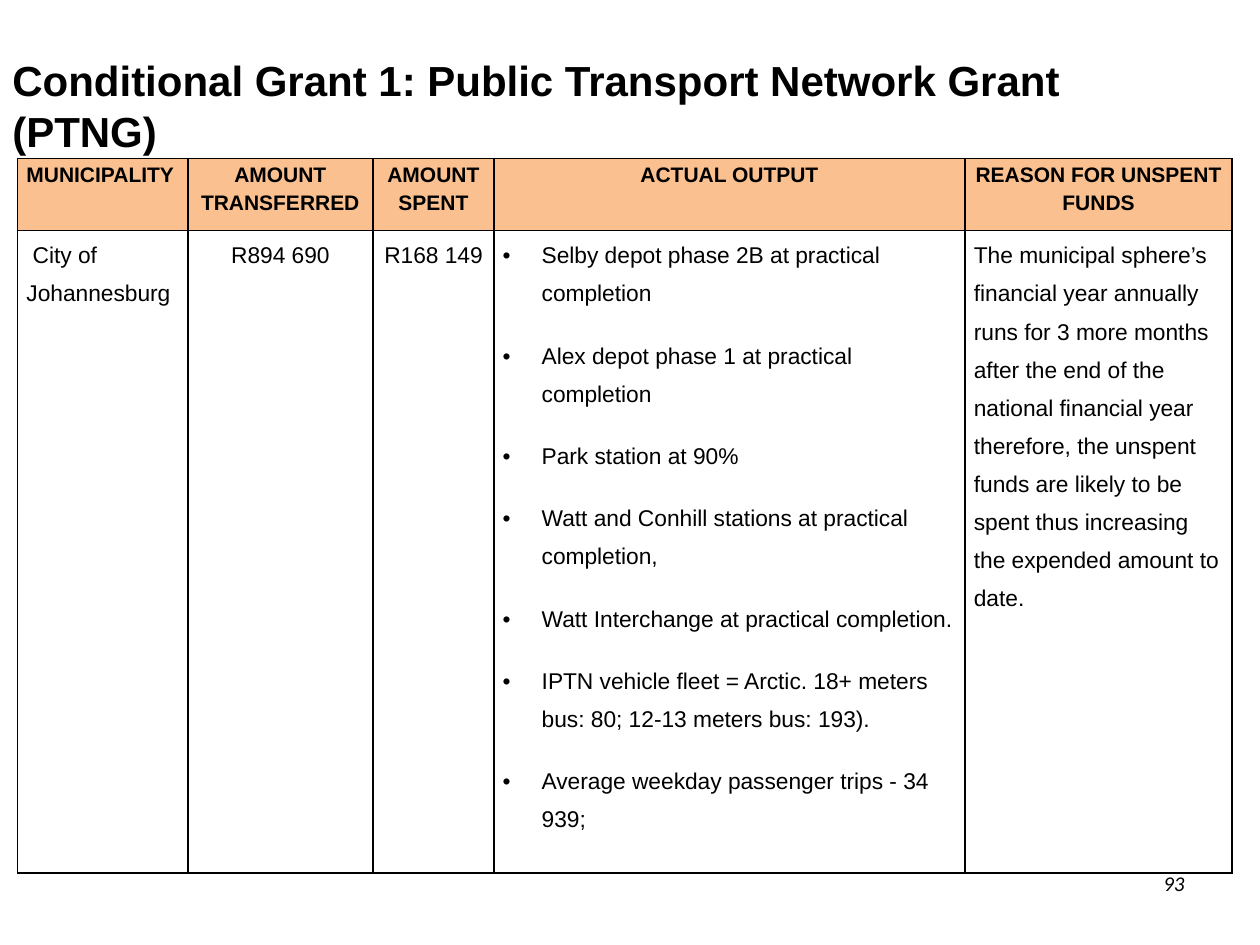
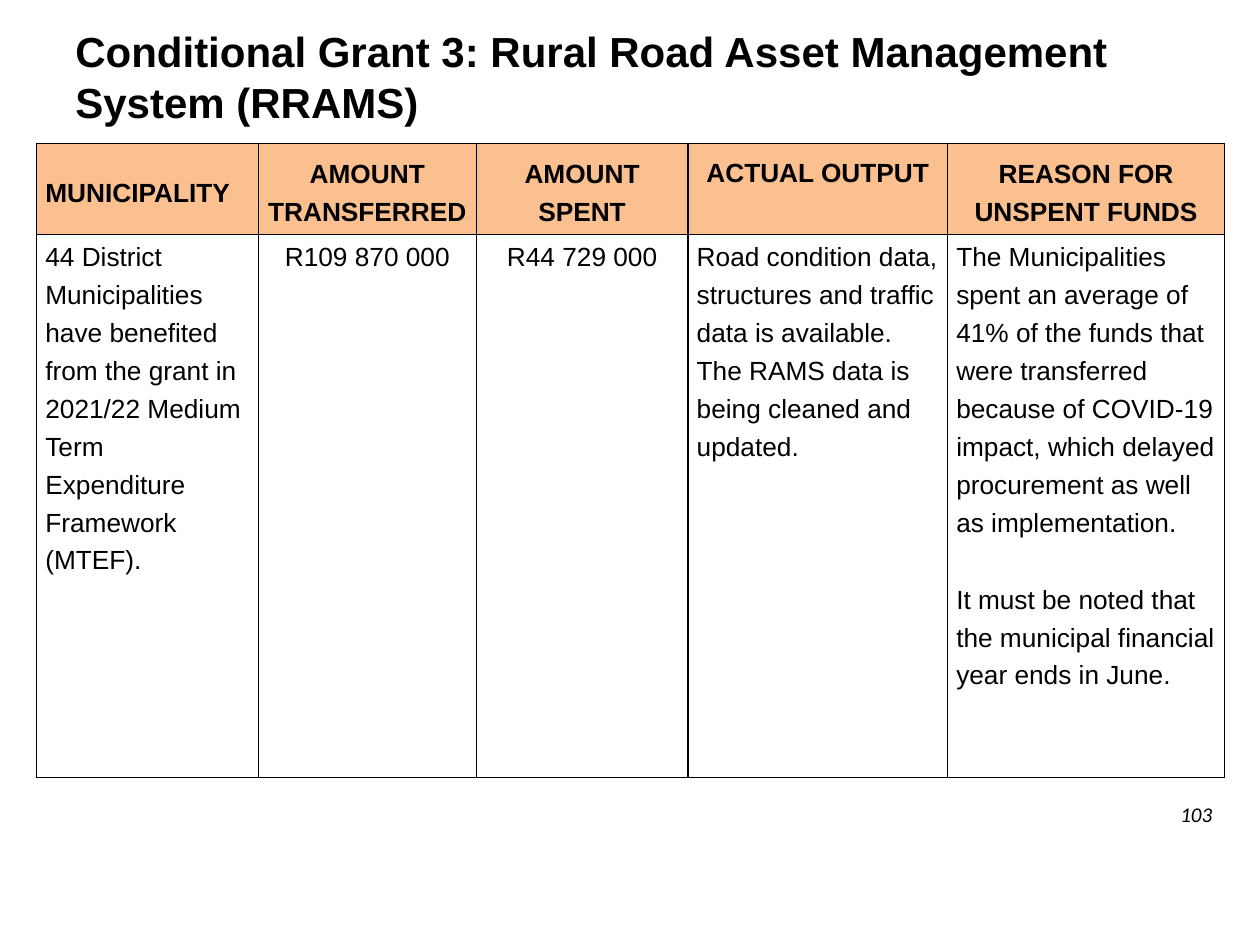
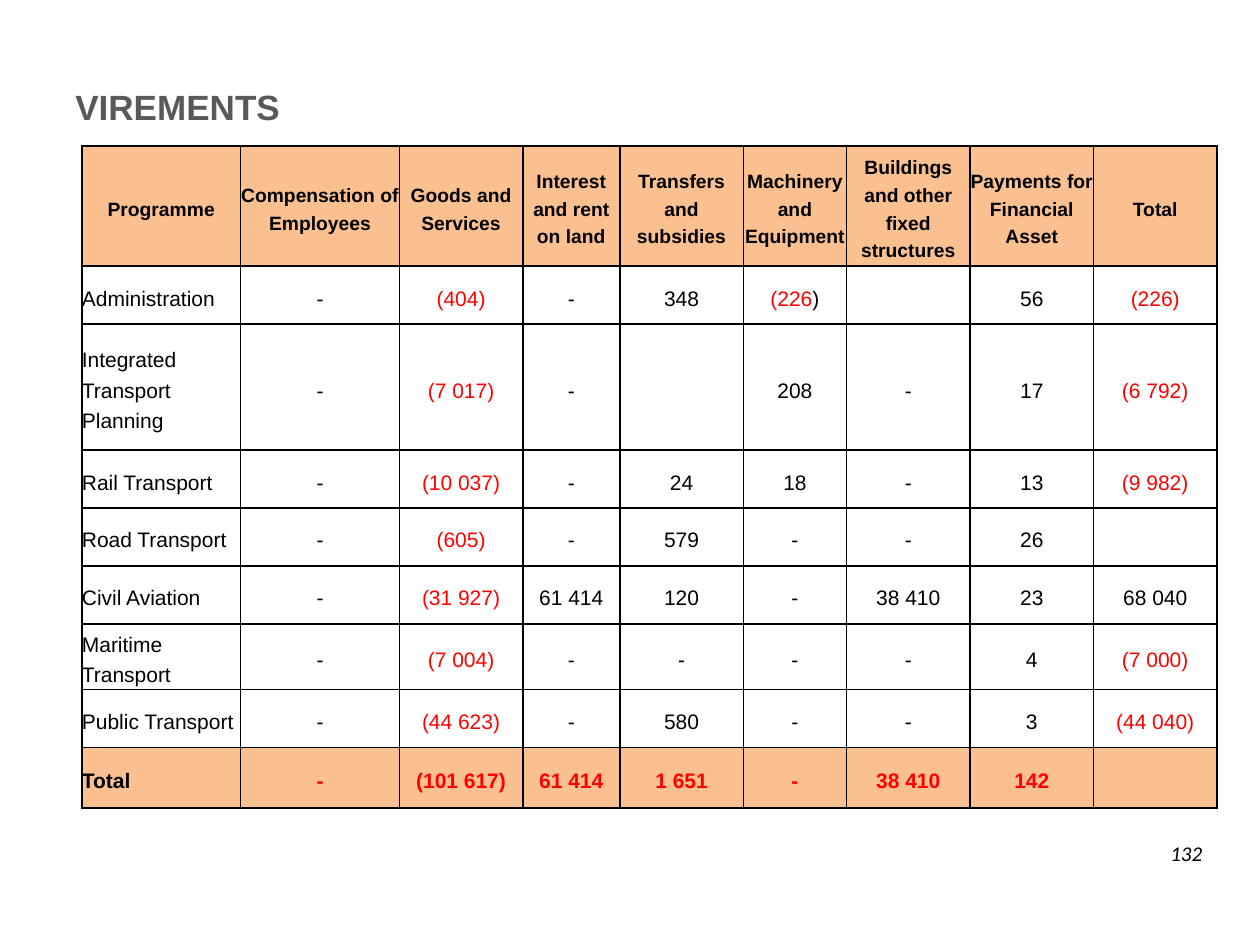
"""Build three slides of grant and virement tables."""
from lxml.etree import SubElement
from pptx import Presentation
from pptx.dml.color import RGBColor
from pptx.enum.text import MSO_ANCHOR, PP_ALIGN
from pptx.oxml import parse_xml
from pptx.oxml.ns import nsdecls, qn
from pptx.util import Inches, Pt

PEACH, BLACK, GREY, RED = "FAC090", "000000", "595959", "FF0000"
LEFT, MID, RIGHT = PP_ALIGN.LEFT, PP_ALIGN.CENTER, PP_ALIGN.RIGHT


def tint(color, code):
    """Give a colour format the colour of a hex string."""
    color.rgb = RGBColor.from_string(code)


def write(frame, text, size, align=LEFT, space=1, gap=0, bold=False, ink=BLACK, face="Arial"):
    """Write one paragraph a line, and one run for each part between bars."""
    frame.word_wrap = True
    frame.text = text.replace("|", "")
    for row, line in enumerate(text.split("\n")):
        para = frame.paragraphs[row]
        para.alignment, para.line_spacing = align, space
        if row:
            para.space_before = Pt(gap)
        if "|" in line:
            parts = line.split("|")
            para.runs[0].text = parts[0]
            for part in parts[1:]:
                para.add_run().text = part
        for run in para.runs:
            font = run.font
            font.name, font.size, font.bold = face, Pt(size), bold
            tint(font.color, RED if run.text.startswith("(") and not run.text.endswith("(PTNG)") else ink)


pages = [
    dict(
        title="Conditional Grant 1: Public Transport Network Grant (PTNG)",
        box=(0, 2, 95, 12.7), size=24, ink=BLACK, lead=4.8, space=1,
        number="93", foot=(72.8, 68.6, 22.2, 3),
        spot=(1.4, 12.6), cols=[13.5, 14.7, 9.6, 37.4, 21.2], rows=[5.7, 51],
        sizes=(12, 13), lines=(1.2, 1.5), gap=13.8, inset=0.7,
        heads=MSO_ANCHOR.TOP, body=MSO_ANCHOR.TOP, mids=(1, 2), dots=(3,), sums=False,
        data=[
            ["MUNICIPALITY", "AMOUNT TRANSFERRED", "AMOUNT SPENT", "ACTUAL OUTPUT",
             "REASON FOR UNSPENT FUNDS"],
            [" City of Johannesburg", "R894 690", "R168 149",
             "Selby depot phase 2B at practical completion\n"
             "Alex depot phase 1 at practical completion\n"
             "Park station at 90%\n"
             "Watt and Conhill stations at practical completion,\n"
             "Watt Interchange at practical completion.\n"
             "IPTN vehicle fleet = Arctic. 18+ meters bus: 80; 12-13 meters bus: 193).\n"
             "Average weekday passenger trips - 34 939;",
             "The municipal sphere’s financial year annually runs for 3 more months after "
             "the end of the national financial year therefore, the unspent funds are likely "
             "to be spent thus increasing the expended amount to date."],
        ]),
    dict(
        title="Conditional Grant 3: Rural Road Asset Management System (RRAMS)",
        box=(5, 3, 90, 6.1), size=24, ink=BLACK, lead=4.8, space=1,
        number="103", foot=(73.6, 63.1, 23.6, 3),
        spot=(2.9, 11.4), cols=[17.6, 17.3, 16.8, 20.6, 22], rows=[7.2, 43.1],
        sizes=(15, 15), lines=(1.3, 1.3), gap=22.4, inset=0.7,
        heads=MSO_ANCHOR.MIDDLE, body=MSO_ANCHOR.TOP, mids=(1, 2), dots=(), sums=False,
        data=[
            ["MUNICIPALITY", "AMOUNT TRANSFERRED", "AMOUNT SPENT", "ACTUAL OUTPUT",
             "REASON FOR UNSPENT FUNDS"],
            ["44 District Municipalities have benefited from the grant in 2021/22 Medium Term "
             "Expenditure Framework (MTEF).", "R109 870 000", "R44 729 000",
             "Road condition data, structures and traffic data is available. "
             "The RAMS data is being cleaned and updated.",
             "The Municipalities spent an average of 41% of the funds that were transferred "
             "because of COVID-19 impact, which delayed procurement as well as implementation.\n"
             "It must be noted that the municipal financial year ends in June."],
        ]),
    dict(
        title="VIREMENTS",
        box=(5, 3.6, 90, 8), size=20, ink=GREY, lead=0, space=1.5,
        number="132", foot=(72.8, 66.2, 23.6, 3),
        spot=(6.5, 11.6), cols=[12.6, 12.6, 9.8, 7.7, 9.8, 8.2, 9.8, 9.8, 9.8],
        rows=[8.3, 4.6, 10, 4.6, 4.6, 4.6, 4.7, 4.6, 4.8],
        sizes=(11, 12), lines=(1.3, 1.3), gap=0, inset=0,
        heads=MSO_ANCHOR.MIDDLE, body=MSO_ANCHOR.MIDDLE, mids=range(1, 9), dots=(), sums=True,
        data=[
            ["Programme", "Compensation of Employees", "Goods and Services",
             "Interest and rent on land", "Transfers and subsidies", "Machinery and Equipment",
             "Buildings and other fixed structures", "Payments for Financial Asset", "Total"],
            ["Administration", "-", "(404)", "-", "348", "(226|)", "", "56", "(226)"],
            ["Integrated Transport Planning", "-", "(7 017)", "-", "", "208", "-", "17", "(6 792)"],
            ["Rail Transport", "-", "(10 037)", "-", "24", "18", "-", "13", "(9 982)"],
            ["Road Transport", "-", "(605)", "-", "579", "-", "-", "26", ""],
            ["Civil Aviation", "-", "(31 927)", "61 414", "120", "-", "38 410", "23", "68 040"],
            ["Maritime Transport", "-", "(7 004)", "-", "-", "-", "-", "4", "(7 000)"],
            ["Public Transport", "-", "(44 623)", "-", "580", "-", "-", "3", "(44 040)"],
            ["Total", "-", "(101 617)", "61 414", "1 651", "-", "38 410", "142", ""],
        ]),
]

deck = Presentation()
deck.slide_width, deck.slide_height = Inches(10), Inches(7.5)
unit = deck.slide_width // 100

for page in pages:
    slide = deck.slides.add_slide(deck.slide_layouts[6])

    frame = slide.shapes.add_textbox(*[int(n * unit) for n in page["box"]]).text_frame
    frame.vertical_anchor = MSO_ANCHOR.MIDDLE
    write(frame, page["title"], page["size"], space=page["space"], bold=True, ink=page["ink"])
    frame.paragraphs[0].space_before = Pt(page["lead"])

    cols, rows, data = page["cols"], page["rows"], page["data"]
    area = [int(n * unit) for n in (*page["spot"], sum(cols), sum(rows))]
    table = slide.shapes.add_table(len(rows), len(cols), *area).table
    table.first_row = table.horz_banding = False
    for col, width in zip(table.columns, cols):
        col.width = int(width * unit)
    for row, height in zip(table.rows, rows):
        row.height = int(height * unit)

    for r, line in enumerate(data):
        head = r == 0
        total = page["sums"] and r == len(data) - 1
        for c, text in enumerate(line):
            cell = table.cell(r, c)
            cell.margin_left = cell.margin_right = int(page["inset"] * unit)
            cell.margin_top = cell.margin_bottom = 0
            cell.vertical_anchor = page["heads"] if head else page["body"]
            if text == "ACTUAL OUTPUT" and page["heads"] == MSO_ANCHOR.MIDDLE:
                cell.vertical_anchor = MSO_ANCHOR.TOP
                cell.margin_top = unit // 2
            centred = (c > 0 or page["sums"]) if head else c in page["mids"]
            write(cell.text_frame, text, page["sizes"][not head], MID if centred else LEFT,
                  page["lines"][not head], page["gap"], head or total,
                  RED if total and c else BLACK)
            if not head and c in page["dots"]:
                for para in cell.text_frame.paragraphs:
                    props = para._p.get_or_add_pPr()
                    props.set("marL", str(Inches(0.31)))
                    props.set("indent", str(-Inches(0.31)))
                    SubElement(props, qn("a:buFont")).set("typeface", "Arial")
                    SubElement(props, qn("a:buChar")).set("char", "•")
            edges = cell._tc.get_or_add_tcPr()
            for side in ("lnL", "lnR", "lnT", "lnB"):
                edges.append(parse_xml(
                    f'<a:{side} {nsdecls("a")} w="{Pt(1)}"><a:solidFill>'
                    f'<a:srgbClr val="{BLACK}"/></a:solidFill></a:{side}>'))
            if head or total:
                cell.fill.solid()
                tint(cell.fill.fore_color, PEACH)
            else:
                cell.fill.background()

    frame = slide.shapes.add_textbox(*[int(n * unit) for n in page["foot"]]).text_frame
    write(frame, page["number"], 12, RIGHT, face="Calibri")
    frame.paragraphs[0].runs[0].font.italic = True

deck.save("out.pptx")
